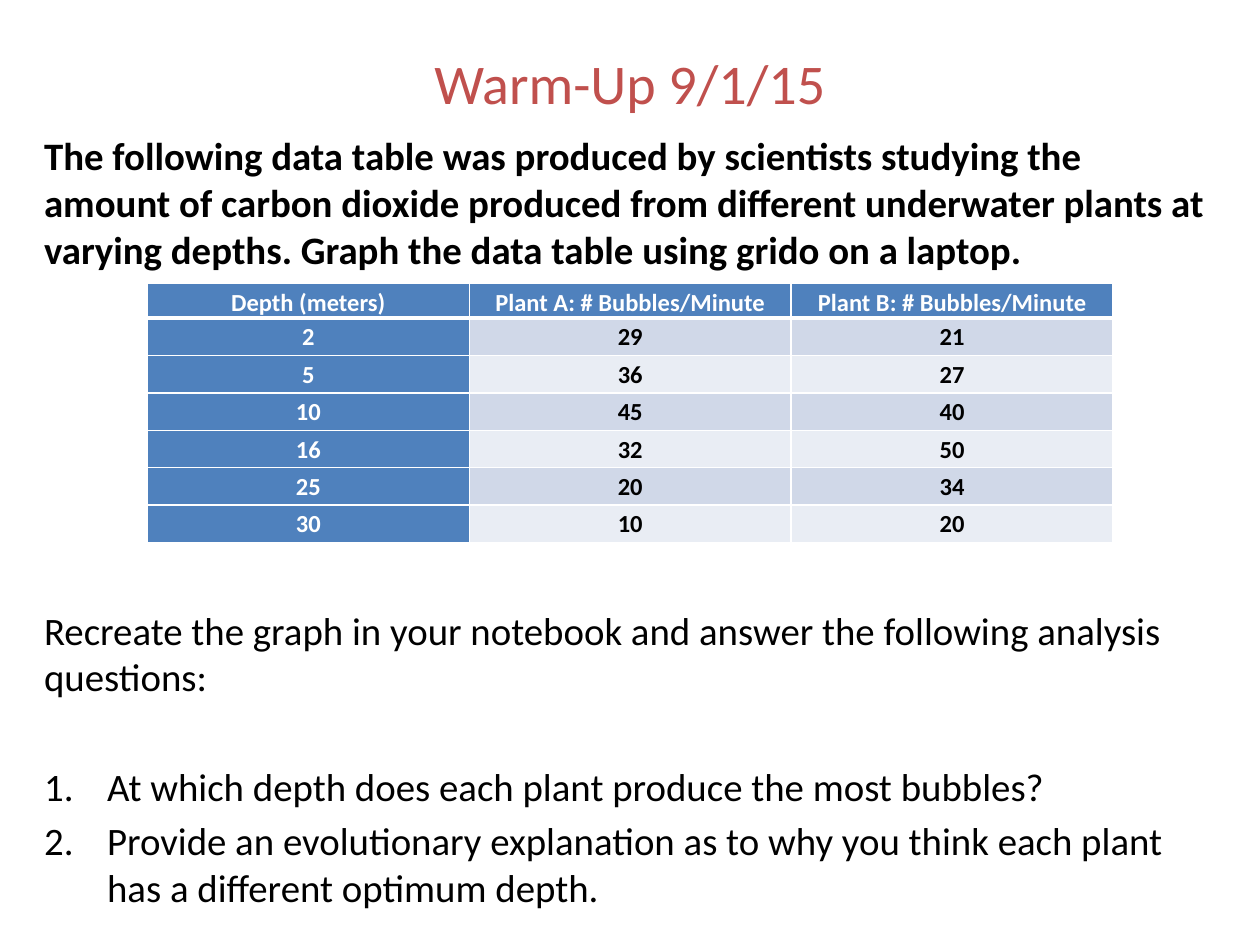
"""Build a warm-up slide with a plant data table and analysis questions."""
import lxml.etree
import pptx
import pptx.dml.color
import pptx.enum.text
import pptx.oxml.ns
import pptx.util

Cm = pptx.util.Cm
Pt = pptx.util.Pt
qn = pptx.oxml.ns.qn

FONT = "Calibri"
TITLE = "Warm-Up 9/1/15"
BODY = [
    {"text": "The following data table was produced by scientists studying the amount of carbon dioxide "
             "produced from different underwater plants at varying depths. Graph the data table using "
             "grido on a laptop.", "before": 0, "bold": True, "numbered": False},
    {"text": "Recreate the graph in your notebook and answer the following analysis questions:",
     "before": 191, "bold": False, "numbered": False},
    {"text": "At which depth does each plant produce the most bubbles?",
     "before": 36, "bold": False, "numbered": True},
    {"text": "Provide an evolutionary explanation as to why you think each plant has a different "
             "optimum depth.", "before": 4.4, "bold": False, "numbered": True},
]
ROWS = [
    ("Depth (meters)", "Plant A: # Bubbles/Minute", "Plant B: # Bubbles/Minute"),
    (2, 29, 21),
    (5, 36, 27),
    (10, 45, 40),
    (16, 32, 50),
    (25, 20, 34),
    (30, 10, 20),
]
HEADER_FILL = "4F81BD"
BAND_FILLS = ("E9EDF4", "D0D8E8")
HEADER_HEIGHT, ROW_HEIGHT, COLUMN_WIDTH = 0.69, 0.755, 6.49


def color(value):
    return pptx.dml.color.RGBColor.from_string(value)


def format_paragraph(paragraph, size, hex_color, bold=False, alignment="LEFT"):
    paragraph.alignment = getattr(pptx.enum.text.PP_ALIGN, alignment)
    for run in paragraph.runs:
        run.font.name = FONT
        run.font.size = Pt(size)
        run.font.bold = bold
        run.font.color.rgb = color(hex_color)


def add_text_frame(slide, left, top, width, height):
    text_frame = slide.shapes.add_textbox(Cm(left), Cm(top), Cm(width), Cm(height)).text_frame
    text_frame.word_wrap = True
    return text_frame


def number_paragraph(paragraph):
    properties = paragraph._p.get_or_add_pPr()
    properties.set("marL", str(Cm(1.27)))
    properties.set("indent", str(-Cm(1.27)))
    lxml.etree.SubElement(properties, qn("a:buFont"), typeface="+mj-lt")
    lxml.etree.SubElement(properties, qn("a:buAutoNum"), type="arabicPeriod")


def add_borders(cell, bottom):
    properties = cell._tc.get_or_add_tcPr()
    for side, width in (("L", 1), ("R", 1), ("T", 1), ("B", bottom)):
        line = lxml.etree.SubElement(properties, qn(f"a:ln{side}"), w=str(Pt(width)))
        fill = lxml.etree.SubElement(line, qn("a:solidFill"))
        lxml.etree.SubElement(fill, qn("a:srgbClr"), val="FFFFFF")


def add_title(slide):
    text_frame = add_text_frame(slide, 1.27, 0.76, 22.86, 1.78)
    text_frame.vertical_anchor = pptx.enum.text.MSO_ANCHOR.MIDDLE
    text_frame.text = TITLE
    format_paragraph(text_frame.paragraphs[0], 32, "C0504D", alignment="CENTER")


def add_body(slide):
    text_frame = add_text_frame(slide, 0.64, 2.54, 24.13, 15.24)
    text_frame.text = "\n".join(item["text"] for item in BODY)
    for paragraph, item in zip(text_frame.paragraphs, BODY):
        format_paragraph(paragraph, 22.2, "000000", item["bold"])
        paragraph.space_before = Pt(item["before"])
        if item["numbered"]:
            number_paragraph(paragraph)


def add_data_table(slide):
    row_count, column_count = len(ROWS), len(ROWS[0])
    height = HEADER_HEIGHT + ROW_HEIGHT * (row_count - 1)
    table = slide.shapes.add_table(row_count, column_count, Cm(2.97), Cm(5.72),
                                   Cm(COLUMN_WIDTH * column_count), Cm(height)).table
    table.first_col = True
    for column in table.columns:
        column.width = Cm(COLUMN_WIDTH)
    for row_index, values in enumerate(ROWS):
        table.rows[row_index].height = Cm(ROW_HEIGHT if row_index else HEADER_HEIGHT)
        for column_index, value in enumerate(values):
            is_header = row_index == 0 or column_index == 0
            cell = table.cell(row_index, column_index)
            cell.margin_left = cell.margin_right = Cm(0.18)
            cell.margin_top = cell.margin_bottom = 0
            add_borders(cell, 1 if row_index else 3)
            cell.fill.solid()
            cell.fill.fore_color.rgb = color(HEADER_FILL if is_header else BAND_FILLS[row_index % 2])
            cell.text_frame.text = str(value)
            paragraph = cell.text_frame.paragraphs[0]
            format_paragraph(paragraph, 14, "FFFFFF" if is_header else "000000", True, "CENTER")
            paragraph.line_spacing = 1.15
            paragraph.space_after = Pt(10)


def main():
    presentation = pptx.Presentation()
    presentation.slide_width, presentation.slide_height = Cm(25.4), Cm(19.05)
    slide = presentation.slides.add_slide(presentation.slide_layouts[6])
    add_title(slide)
    add_body(slide)
    add_data_table(slide)
    presentation.save("out.pptx")


if __name__ == "__main__":
    main()
